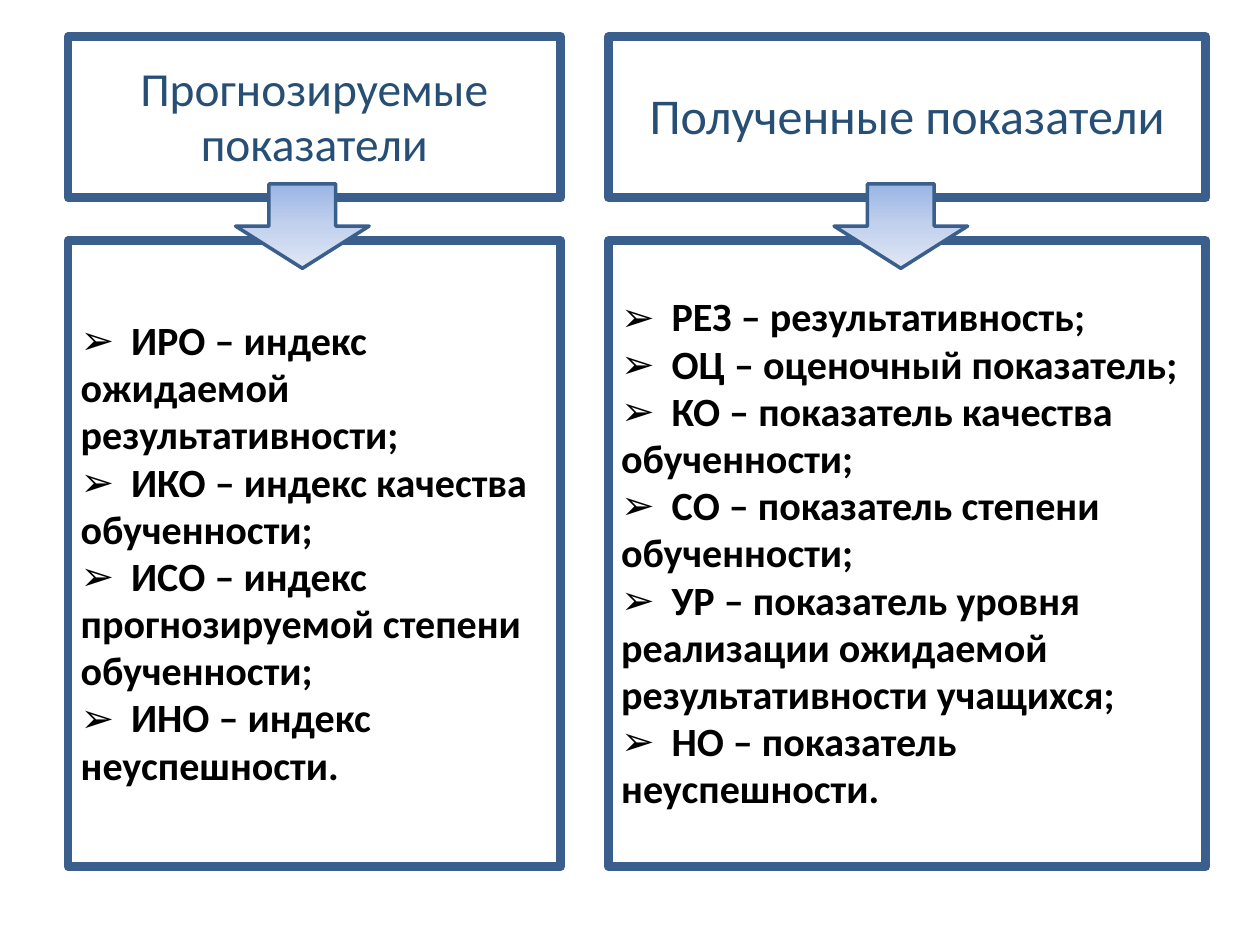
import copy

import pptx
import pptx.dml.color
import pptx.enum.shapes
import pptx.enum.text
import pptx.oxml
import pptx.oxml.ns
import pptx.util

Inches = pptx.util.Inches
Pt = pptx.util.Pt
ALIGN = pptx.enum.text.PP_ALIGN

COLORS = {
    "frame": "3A5F8C",
    "heading": "274E75",
    "body": "000000",
    "arrow_top": "9AB5E4",
    "arrow_middle": "C2D1ED",
    "arrow_bottom": "E1E8F5",
}
TOP, HEADING_HEIGHT = 0.29, 1.28
LIST_TOP, LIST_HEIGHT = 1.91, 4.97
ARROW_TOP, ARROW_WIDTH, ARROW_HEIGHT = 1.46, 1.06, 0.67
BULLET_GAP = 0.4

COLUMNS = [
    {
        "left": 0.54, "width": 3.91, "arrow_left": 1.87, "size": 27.1,
        "placeholders": (1, 2),
        "heading": "Прогнозируемые показатели",
        "items": [
            "ИРО – индекс ожидаемой результативности;",
            "ИКО – индекс качества обученности;",
            "ИСО – индекс прогнозируемой степени обученности;",
            "ИНО – индекс неуспешности.",
        ],
    },
    {
        "left": 4.83, "width": 4.74, "arrow_left": 6.62, "size": 28.6,
        "placeholders": (3, 4),
        "heading": "Полученные показатели",
        "items": [
            "РЕЗ – результативность;",
            "ОЦ – оценочный показатель;",
            "КО – показатель качества обученности;",
            "СО – показатель степени обученности;",
            "УР – показатель уровня реализации ожидаемой результативности учащихся;",
            "НО – показатель неуспешности.",
        ],
    },
]


def rgb(name):
    return pptx.dml.color.RGBColor.from_string(COLORS[name])


def apply(target, values):
    for name, value in values.items():
        setattr(target, name, value)


def place(shape, box):
    names = ("left", "top", "width", "height")
    apply(shape, {name: Inches(length) for name, length in zip(names, box)})


def outline(shape, width):
    shape.line.color.rgb = rgb("frame")
    shape.line.width = Pt(width)


def add_bullet(para):
    properties = para._p.get_or_add_pPr()
    properties.set("marL", "0")
    properties.set("indent", "0")
    namespace = pptx.oxml.ns.nsdecls("a")
    for xml in (
        f'<a:buFont {namespace} typeface="Arial"/>',
        f'<a:buChar {namespace} char="➢"/>',
        f'<a:tabLst {namespace}><a:tab pos="{Inches(BULLET_GAP)}" algn="l"/></a:tabLst>',
    ):
        properties.append(pptx.oxml.parse_xml(xml))


def fill_frame(shape, box, lines, para_format, font_format, color):
    place(shape, box)
    outline(shape, 5)
    frame = shape.text_frame
    apply(frame, {
        "word_wrap": True,
        "auto_size": pptx.enum.text.MSO_AUTO_SIZE.NONE,
        "vertical_anchor": pptx.enum.text.MSO_ANCHOR.MIDDLE,
    })
    for index, line in enumerate(lines):
        para = frame.paragraphs[0] if index == 0 else frame.add_paragraph()
        apply(para, {"space_before": Pt(0), "line_spacing": 0.98, **para_format})
        span = para.add_run()
        span.text = line
        apply(span.font, {"name": "Calibri", **font_format})
        span.font.color.rgb = rgb(color)
    return frame


def fill_heading(shape, box, text, size):
    fill_frame(shape, box, [text], {"alignment": ALIGN.CENTER},
               {"size": Pt(size), "bold": False}, "heading")


def fill_list(shape, box, items):
    frame = fill_frame(shape, box, ["\t" + item for item in items],
                       {"alignment": ALIGN.LEFT},
                       {"size": Pt(22.9), "bold": True}, "body")
    for para in frame.paragraphs:
        add_bullet(para)


def add_arrow(page, box):
    arrow = page.shapes.add_shape(
        pptx.enum.shapes.MSO_SHAPE.DOWN_ARROW, *(Inches(length) for length in box))
    arrow.shadow.inherit = False
    outline(arrow, 2)
    arrow.fill.gradient()
    arrow.fill.gradient_angle = 270
    first = arrow.fill.gradient_stops[0]._gs
    first.addnext(copy.deepcopy(first))
    stops = zip(arrow.fill.gradient_stops, (0, 0.5, 1),
                ("arrow_top", "arrow_middle", "arrow_bottom"))
    for stop, position, color in stops:
        stop.position = position
        stop.color.rgb = rgb(color)


def fill_column(page, column):
    left, width = column["left"], column["width"]
    holders = {shape.placeholder_format.idx: shape for shape in page.placeholders}
    heading, body = (holders[index] for index in column["placeholders"])
    fill_heading(heading, (left, TOP, width, HEADING_HEIGHT),
                 column["heading"], column["size"])
    fill_list(body, (left, LIST_TOP, width, LIST_HEIGHT), column["items"])
    add_arrow(page, (column["arrow_left"], ARROW_TOP, ARROW_WIDTH, ARROW_HEIGHT))


def main():
    deck = pptx.Presentation()
    deck.slide_width, deck.slide_height = Inches(10), Inches(7.5)
    page = deck.slides.add_slide(deck.slide_layouts.get_by_name("Comparison"))
    title = page.shapes.title._element
    title.getparent().remove(title)
    for column in COLUMNS:
        fill_column(page, column)
    deck.save("out.pptx")


if __name__ == "__main__":
    main()
